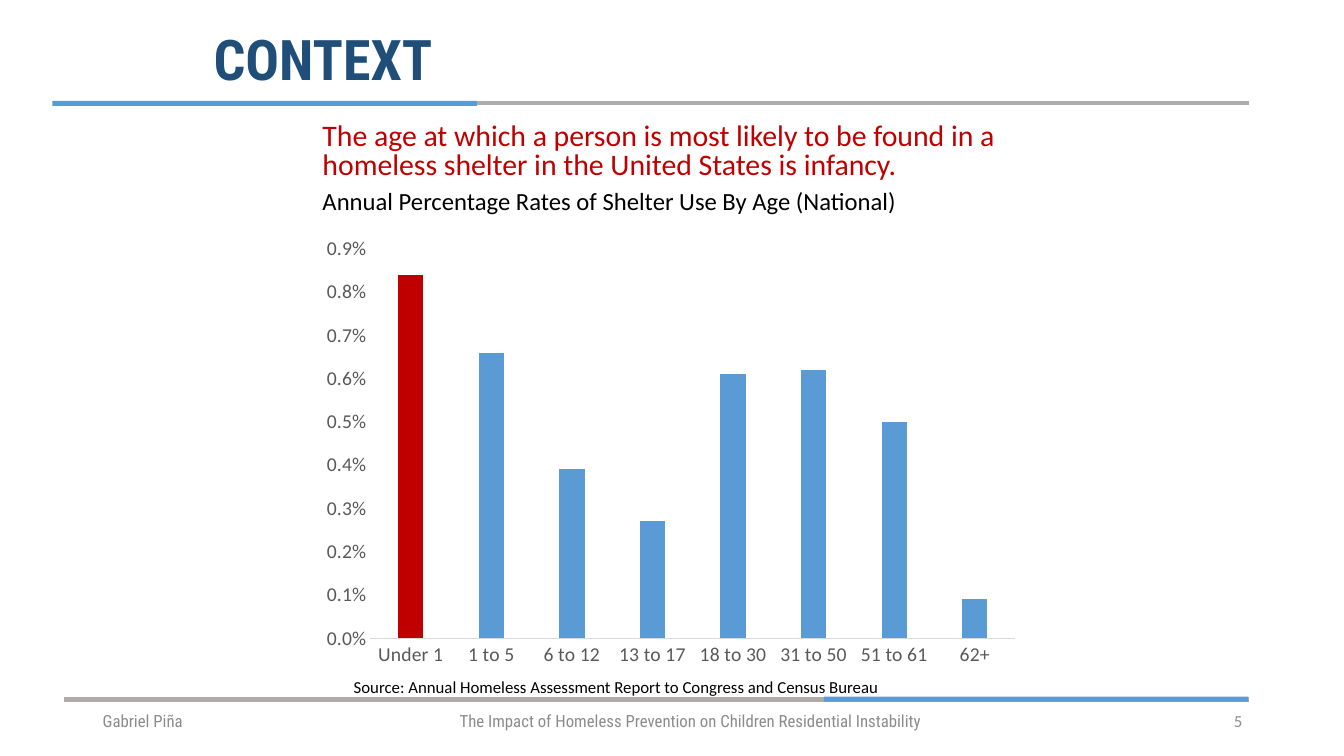
from pptx import Presentation
from pptx.chart.data import CategoryChartData
from pptx.dml.color import RGBColor
from pptx.enum.chart import XL_CHART_TYPE as ChartType, XL_TICK_MARK as TickMark
from pptx.enum.shapes import MSO_SHAPE as Shape
from pptx.enum.text import MSO_ANCHOR as Anchor, PP_ALIGN as Align
from pptx.util import Inches, Pt

COLORS = {
    "blue": "5B9BD5", "navy": "1F4E79", "red": "C00000", "rule": "AFABAB",
    "footer": "8C8C8C", "axis": "595959", "axis_line": "D9D9D9", "black": "000000",
}
HEADING_FONT = "Roboto Condensed"
BODY_FONT = "Calibri"


class SlideBuilder:
    """Draws styled elements on the current slide."""

    def __init__(self, slide):
        self.slide = slide

    def color(self, name):
        return RGBColor.from_string(COLORS[name])

    def style(self, font, size, color, name=BODY_FONT, bold=False):
        font.name, font.size, font.bold = name, Pt(size), bold
        font.color.rgb = self.color(color)

    def bar(self, kind, box, color):
        shape = self.slide.shapes.add_shape(kind, *map(Inches, box))
        shape.shadow.inherit = False
        shape.fill.solid()
        shape.fill.fore_color.rgb = self.color(color)
        shape.line.fill.background()

    def text(self, box, lines, name=BODY_FONT, bold=False, anchor=Anchor.MIDDLE,
             align=Align.LEFT, line_spacing=1.0, space_before=0):
        frame = self.slide.shapes.add_textbox(*map(Inches, box)).text_frame
        frame.word_wrap = True
        frame.vertical_anchor = anchor
        frame.text = "\n".join(line for line, size, color in lines)
        for paragraph, (line, size, color) in zip(frame.paragraphs, lines):
            paragraph.alignment = align
            paragraph.line_spacing = line_spacing
            paragraph.space_before = Pt(space_before)
            self.style(paragraph.runs[0].font, size, color, name, bold)

    def column_chart(self, box, rates, highlight):
        data = CategoryChartData(number_format="0.0%")
        data.categories = list(rates)
        data.add_series("Shelter use", list(rates.values()))
        chart = self.slide.shapes.add_chart(
            ChartType.COLUMN_CLUSTERED, *map(Inches, box), data).chart
        chart.has_legend = chart.has_title = False
        self.style(chart.font, 14, "black")

        plot = chart.plots[0]
        plot.gap_width, plot.overlap = 219, -27
        plot.vary_by_categories = False
        series = plot.series[0]
        highlighted = series.points[list(rates).index(highlight)]
        for column, color in ((series, "blue"), (highlighted, "red")):
            column.format.fill.solid()
            column.format.fill.fore_color.rgb = self.color(color)

        ages, shares = chart.category_axis, chart.value_axis
        for axis in (ages, shares):
            axis.has_major_gridlines = False
            axis.major_tick_mark = axis.minor_tick_mark = TickMark.NONE
            self.style(axis.tick_labels.font, 14, "axis")
        ages.format.line.color.rgb = self.color("axis_line")
        ages.format.line.width = Pt(0.75)
        shares.format.line.fill.background()
        shares.minimum_scale, shares.maximum_scale = 0, 0.009
        shares.major_unit = 0.001
        shares.tick_labels.number_format = "0.0%"
        shares.tick_labels.number_format_is_linked = False


def main():
    presentation = Presentation()
    presentation.slide_width, presentation.slide_height = Inches(13.33), Inches(7.5)
    builder = SlideBuilder(presentation.slides.add_slide(presentation.slide_layouts[6]))

    for rule_top, accent_left, accent_top in ((0.93, 0.52, 1), (6.85, 8.17, 6.91)):
        builder.bar(Shape.MATH_MINUS, (-1.49, rule_top, 16, 0.18), "rule")
        builder.bar(Shape.RECTANGLE, (accent_left, accent_top, 4.21, 0.05), "blue")

    builder.text((2.02, 0.24, 9.31, 0.76), [("CONTEXT", 40, "navy")],
                 HEADING_FONT, bold=True, line_spacing=0.9)
    builder.text((3.1, 1.18, 7.88, 1.09), [
        ("The age at which a person is most likely to be found in a homeless shelter "
         "in the United States is infancy.", 21.3, "red"),
        ("Annual Percentage Rates of Shelter Use By Age (National)", 17.6, "black"),
    ], anchor=Anchor.TOP, line_spacing=0.8, space_before=7.5)

    builder.column_chart((3.1, 2.26, 7.11, 4.44), {
        "Under 1": 0.0084, "1 to 5": 0.0066, "6 to 12": 0.0039, "13 to 17": 0.0027,
        "18 to 30": 0.0061, "31 to 50": 0.0062, "51 to 61": 0.005, "62+": 0.0009,
    }, highlight="Under 1")
    builder.text((3.41, 6.66, 6.5, 0.3), [
        ("Source: Annual Homeless Assessment Report to Congress and Census Bureau",
         12, "black")], anchor=Anchor.TOP)

    for left, width, footer, font, align in (
        (0.92, 3, "Gabriel Piña", HEADING_FONT, Align.LEFT),
        (4.46, 5.19, "The Impact of Homeless Prevention on Children Residential Instability",
         HEADING_FONT, Align.LEFT),
        (9.42, 3, "5", BODY_FONT, Align.RIGHT),
    ):
        builder.text((left, 6.95, width, 0.4), [(footer, 12, "footer")], font, align=align)

    presentation.save("out.pptx")


if __name__ == "__main__":
    main()
